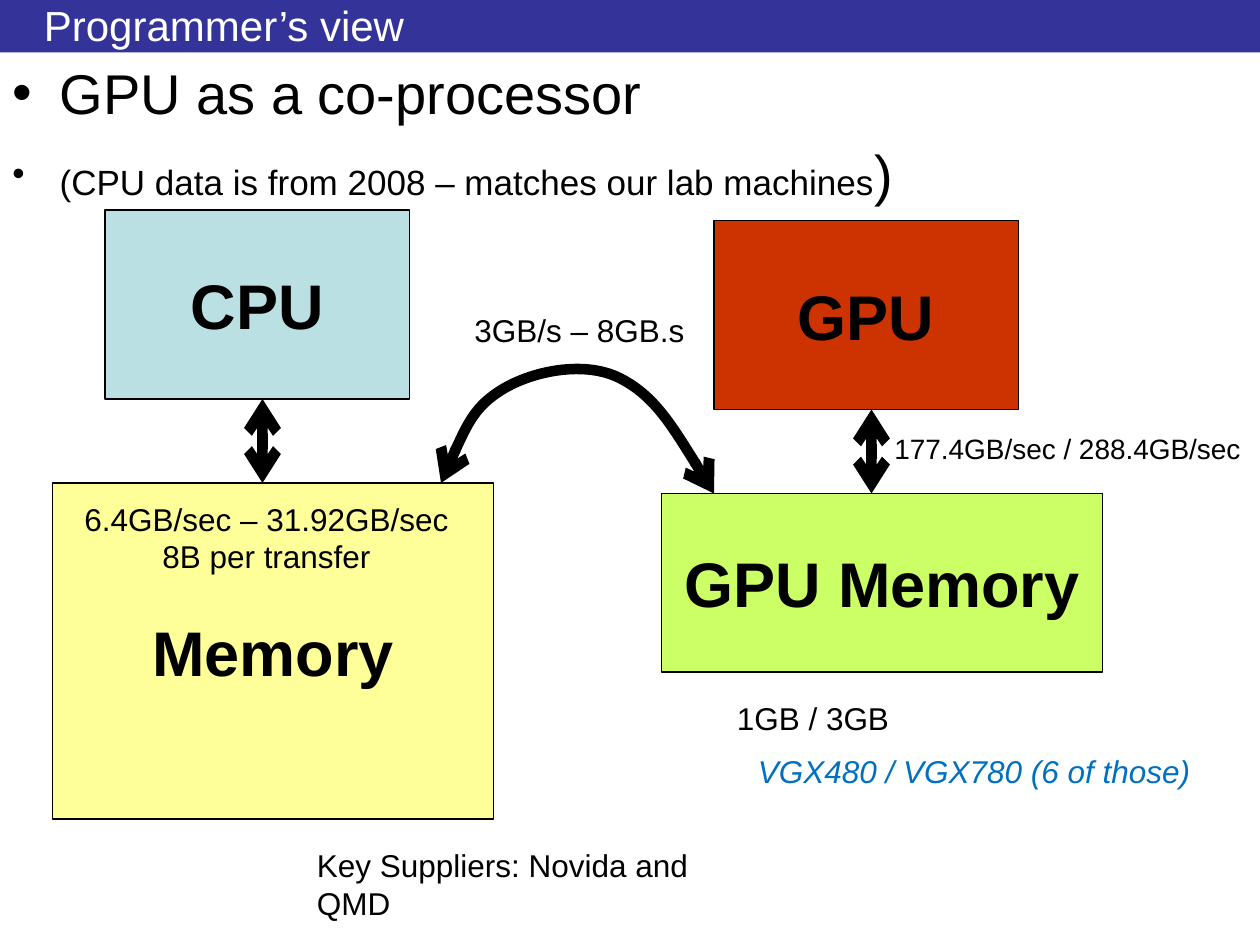
from lxml import etree
from pptx import Presentation, util as u
from pptx.dml.color import RGBColor
from pptx.enum import shapes, text
from pptx.oxml.ns import qn

Pt = u.Pt
COLORS = {"bar": "333399", "white": "FFFFFF", "black": "000000", "blue": "0070C0",
          "cpu": "BBE0E3", "memory": "FFFF99", "gpu": "CC3300", "gpu memory": "CCFF66"}
FONT = "Arial"

TITLE = "Programmer’s view"
# Each bullet: space before, then (text, size) runs
BULLETS = [
    (3, [("GPU as a co-processor", 32)]),
    (8, [("(CPU data is from 2008 – matches our lab machines", 20), (")", 32)]),
]
# Label, fill, (left, top, width, height)
UNITS = [
    ("CPU", "cpu", (60, 120, 174, 108)),
    ("Memory", "memory", (30, 276, 252, 192)),
    ("GPU", "gpu", (408, 126, 174, 108)),
    ("GPU Memory", "gpu memory", (378, 282, 252, 102)),
]
# x, top, bottom
BUSES = [(150, 228, 276), (498, 234, 282)]
# Start point, then three control points for each Bézier segment
TRANSFER = [(252, 276),
            (261, 254), (271, 232), (288, 222),
            (305, 212), (334, 206), (354, 216),
            (374, 226), (391, 254), (408, 282)]
# Lines, (left, top, width, height), format
LABELS = [
    (["1GB / 3GB"], (414, 396, 102, 29), {}),
    (["3GB/s – 8GB.s"], (264, 174, 135, 29), {}),
    (["6.4GB/sec – 31.92GB/sec", "8B per transfer"], (41, 282, 222.5, 50.5),
     {"align": text.PP_ALIGN.CENTER}),
    (["177.4GB/sec / 288.4GB/sec"], (504, 243, 215, 26.5), {"size": 16}),
    (["Key Suppliers: Novida and QMD"], (174, 480, 267, 29), {}),
    (["VGX480 / VGX780 (6 of those)"], (426, 426, 262, 29),
     {"color": "blue", "italic": True}),
]


def rgb(name):
    return RGBColor.from_string(COLORS[name])


def write(paragraph, words, size=18, color="black", bold=False, italic=False,
          align=text.PP_ALIGN.LEFT):
    paragraph.alignment = align
    run = paragraph.add_run()
    run.text = words
    font = run.font
    font.name, font.size, font.bold, font.italic = FONT, Pt(size), bold, italic
    font.color.rgb = rgb(color)


def add_rect(slide, box, fill, outlined=True):
    rect = slide.shapes.add_shape(shapes.MSO_SHAPE.RECTANGLE, *map(Pt, box))
    rect.shadow.inherit = False
    rect.fill.solid()
    rect.fill.fore_color.rgb = rgb(fill)
    if outlined:
        rect.line.color.rgb = rgb("black")
        rect.line.width = Pt(0.75)
    else:
        rect.line.fill.background()
    return rect


def add_frame(slide, box, wrap=True):
    frame = slide.shapes.add_textbox(*map(Pt, box)).text_frame
    frame.word_wrap = wrap
    return frame


def add_bullet(paragraph):
    props = paragraph._p.get_or_add_pPr()
    props.set("marL", str(Pt(27)))
    props.set("indent", str(-Pt(27)))
    etree.SubElement(props, qn("a:buFont"), typeface=FONT)
    etree.SubElement(props, qn("a:buChar"), char="•")


def make_double_arrow(line):
    line.color.rgb = rgb("black")
    line.width = Pt(6)
    ln = line._get_or_add_ln()
    for end in ("a:headEnd", "a:tailEnd"):
        etree.SubElement(ln, qn(end), type="arrow")


def add_curve(slide, points):
    builder = slide.shapes.build_freeform(*points[0], scale=Pt(1))
    builder.add_line_segments(points[1:], close=False)
    curve = builder.convert_to_shape()
    outline = curve._element.find(".//" + qn("a:path"))
    steps = outline.findall(qn("a:lnTo"))
    for first in range(0, len(steps), 3):
        bezier = etree.SubElement(outline, qn("a:cubicBezTo"))
        for step in steps[first:first + 3]:
            bezier.append(step[0])
            outline.remove(step)
    curve.shadow.inherit = False
    curve.fill.background()
    make_double_arrow(curve.line)


def main():
    deck = Presentation()
    deck.slide_width, deck.slide_height = Pt(720), Pt(540)
    slide = deck.slides.add_slide(deck.slide_layouts[6])

    add_rect(slide, (0, 0, 720, 30), "bar", outlined=False)
    heading = add_frame(slide, (18, 4, 666, 20))
    heading.vertical_anchor = text.MSO_ANCHOR.MIDDLE
    write(heading.paragraphs[0], TITLE, size=24, color="white")

    body = add_frame(slide, (0, 30, 720, 510))
    for i, (space, runs) in enumerate(BULLETS):
        paragraph = body.add_paragraph() if i else body.paragraphs[0]
        paragraph.space_before = Pt(space)
        add_bullet(paragraph)
        for words, size in runs:
            write(paragraph, words, size=size)

    for name, fill, box in UNITS:
        frame = add_rect(slide, box, fill).text_frame
        frame.word_wrap = False
        frame.vertical_anchor = text.MSO_ANCHOR.MIDDLE
        write(frame.paragraphs[0], name, size=36, bold=True,
              align=text.PP_ALIGN.CENTER)

    for x, top, bottom in BUSES:
        bus = slide.shapes.add_connector(shapes.MSO_CONNECTOR.STRAIGHT,
                                         Pt(x), Pt(top), Pt(x), Pt(bottom))
        make_double_arrow(bus.line)
        etree.SubElement(bus._element.spPr, qn("a:effectLst"))
    add_curve(slide, TRANSFER)

    for lines, box, style in LABELS:
        frame = add_frame(slide, box, wrap=False)
        frame.auto_size = text.MSO_AUTO_SIZE.SHAPE_TO_FIT_TEXT
        for i, words in enumerate(lines):
            paragraph = frame.add_paragraph() if i else frame.paragraphs[0]
            write(paragraph, words, **style)

    deck.save("out.pptx")


if __name__ == "__main__":
    main()
